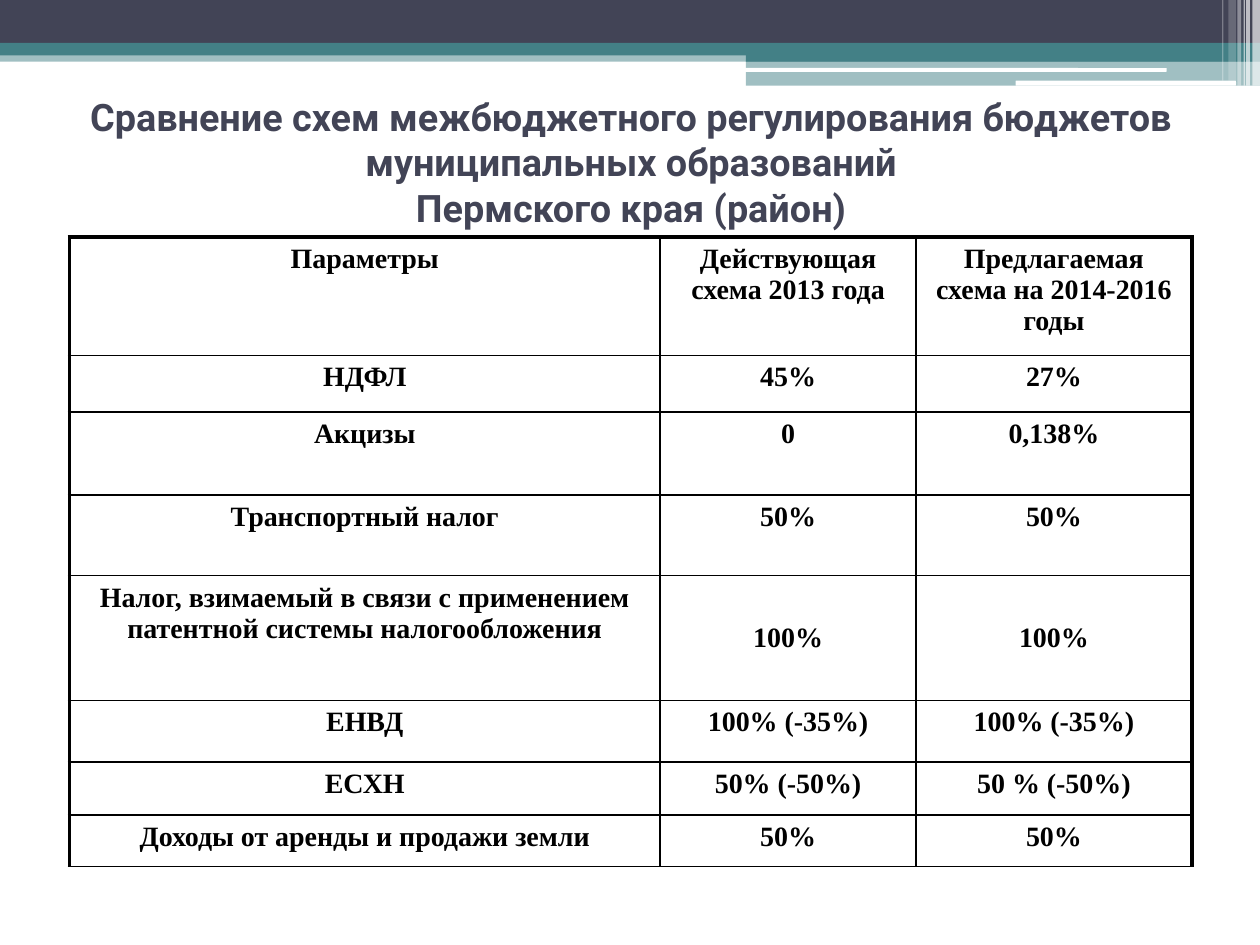
from dataclasses import dataclass

from lxml import etree
from pptx import Presentation
from pptx import util as u
from pptx.dml.color import RGBColor
from pptx.enum import shapes, text
from pptx.oxml import ns


@dataclass(frozen=True)
class Theme:
    dark: str = "424456"
    teal: str = "438086"
    white: str = "FFFFFF"
    ink: str = "000000"
    title_font: str = "Roboto"
    table_font: str = "Times New Roman"
    title_size: float = 21.6
    table_size: float = 16
    outer_line: float = 2.25
    inner_line: float = 1


@dataclass(frozen=True)
class Box:
    left: float
    top: float
    width: float
    height: float

    def inches(self):
        return [u.Inches(n) for n in (self.left, self.top, self.width, self.height)]

    def inner(self, left, top, width, height):
        return Box(self.left + left, self.top + top, width, height)


THEME = Theme()

TITLE = ("Сравнение схем межбюджетного регулирования бюджетов "
         "муниципальных образований\vПермского края (район)")
COLUMNS = [4.69, 2.03, 2.19]
# Row height, then the cell texts
ROWS = [
    (0.94, "Параметры", "Действующая схема 2013 года",
     "Предлагаемая схема на 2014-2016 годы"),
    (0.45, "НДФЛ", "45%", "27%"),
    (0.66, "Акцизы", "0", "0,138%"),
    (0.64, "Транспортный налог", "50%", "50%"),
    (0.99, "Налог, взимаемый в связи с применением патентной системы "
           "налогообложения", "100%", "100%"),
    (0.49, "ЕНВД", "100% (-35%)", "100% (-35%)"),
    (0.42, "ЕСХН", "50% (-50%)", "50 % (-50%)"),
    (0.41, "Доходы от аренды и продажи земли", "50%", "50%"),
]
PATENT_ROW = 4


def set_all(target, values):
    for name, value in values.items():
        setattr(target, name, value)


def style_text(frame, font, size, color):
    for para in frame.paragraphs:
        para.alignment = text.PP_ALIGN.CENTER
        for span in para.runs:
            set_all(span.font, {"name": font, "size": u.Pt(size), "bold": True})
            span.font.color.rgb = RGBColor.from_string(color)


def add_bar(page, box, color, opacity=100, rounded=False):
    kind = shapes.MSO_SHAPE.ROUNDED_RECTANGLE if rounded else shapes.MSO_SHAPE.RECTANGLE
    bar = page.shapes.add_shape(kind, *box.inches())
    bar.shadow.inherit = False
    bar.line.fill.background()
    bar.fill.solid()
    bar.fill.fore_color.rgb = RGBColor.from_string(color)
    if opacity < 100:
        tint = bar.fill._xPr.find(".//" + ns.qn("a:srgbClr"))
        etree.SubElement(tint, ns.qn("a:alpha"), val=str(opacity * 1000))


def add_header(page, box):
    bands = [
        (0, 0.4, 10, 0.09, THEME.teal, 50),
        (0, 0, 10, 0.34, THEME.dark, 100),
        (0, 0.34, 10, 0.1, THEME.teal, 100),
        (5.92, 0.39, 4.08, 0.1, THEME.teal, 100),
        (5.92, 0.48, 4.08, 0.2, THEME.teal, 50),
    ]
    for *place, color, opacity in bands:
        add_bar(page, box.inner(*place), color, opacity)

    for place in [(5.91, 0.54, 3.35, 0.03), (8.06, 0.64, 1.75, 0.04)]:
        add_bar(page, box.inner(*place), THEME.white, rounded=True)

    # Left, width, height and opacity of the stripes at the right edge
    stripes = [
        (9.94, 0.06, 0.68, 65),
        (9.89, 0.03, 0.68, 65),
        (9.87, 0.01, 0.68, 60),
        (9.82, 0.03, 0.68, 40),
        (9.75, 0.06, 0.64, 20),
        (9.7, 0.01, 0.64, 30),
    ]
    for left, width, height, opacity in stripes:
        add_bar(page, box.inner(left, 0, width, height), THEME.white, opacity)


def add_title(page, box):
    title = page.shapes.title
    set_all(title, dict(zip(("left", "top", "width", "height"), box.inches())))
    frame = title.text_frame
    frame.text = TITLE
    set_all(frame, {"word_wrap": True, "auto_size": text.MSO_AUTO_SIZE.NONE,
                    "vertical_anchor": text.MSO_ANCHOR.MIDDLE})
    style_text(frame, THEME.title_font, THEME.title_size, THEME.dark)


def set_borders(cell, widths):
    """Draw cell borders; widths maps L, R, T and B, in that order, to points."""
    properties = cell._tc.get_or_add_tcPr()
    for side, width in widths.items():
        line = etree.SubElement(properties, ns.qn(f"a:ln{side}"), w=str(u.Pt(width)))
        fill = etree.SubElement(line, ns.qn("a:solidFill"))
        etree.SubElement(fill, ns.qn("a:srgbClr"), val=THEME.ink)


def add_comparison(page, box):
    table = page.shapes.add_table(len(ROWS), len(COLUMNS), *box.inches()).table
    set_all(table, {"first_row": False, "horz_banding": False})
    for column, width in zip(table.columns, COLUMNS):
        column.width = u.Inches(width)

    last = len(COLUMNS) - 1
    for r, (height, *labels) in enumerate(ROWS):
        table.rows[r].height = u.Inches(height)
        for c, label in enumerate(labels):
            cell = table.cell(r, c)
            cell.text = label
            style_text(cell.text_frame, THEME.table_font, THEME.table_size, THEME.ink)
            centred = r == PATENT_ROW and c > 0
            cell.vertical_anchor = (text.MSO_ANCHOR.MIDDLE if centred
                                    else text.MSO_ANCHOR.TOP)
            outer = {"L": c == 0, "R": c == last, "T": r == 0, "B": False}
            set_borders(cell, {side: THEME.outer_line if edge else THEME.inner_line
                               for side, edge in outer.items()})
            cell.fill.background()


def main():
    deck = Presentation()
    set_all(deck, {"slide_width": u.Inches(10), "slide_height": u.Inches(7.5)})
    page = deck.slides.add_slide(deck.slide_layouts.get_by_name("Title Only"))
    add_header(page, Box(0, 0, 10, 0.68))
    add_title(page, Box(0.51, 0.76, 9, 1.05))
    add_comparison(page, Box(0.55, 1.88, 8.91, 5))
    deck.save("out.pptx")


if __name__ == "__main__":
    main()
